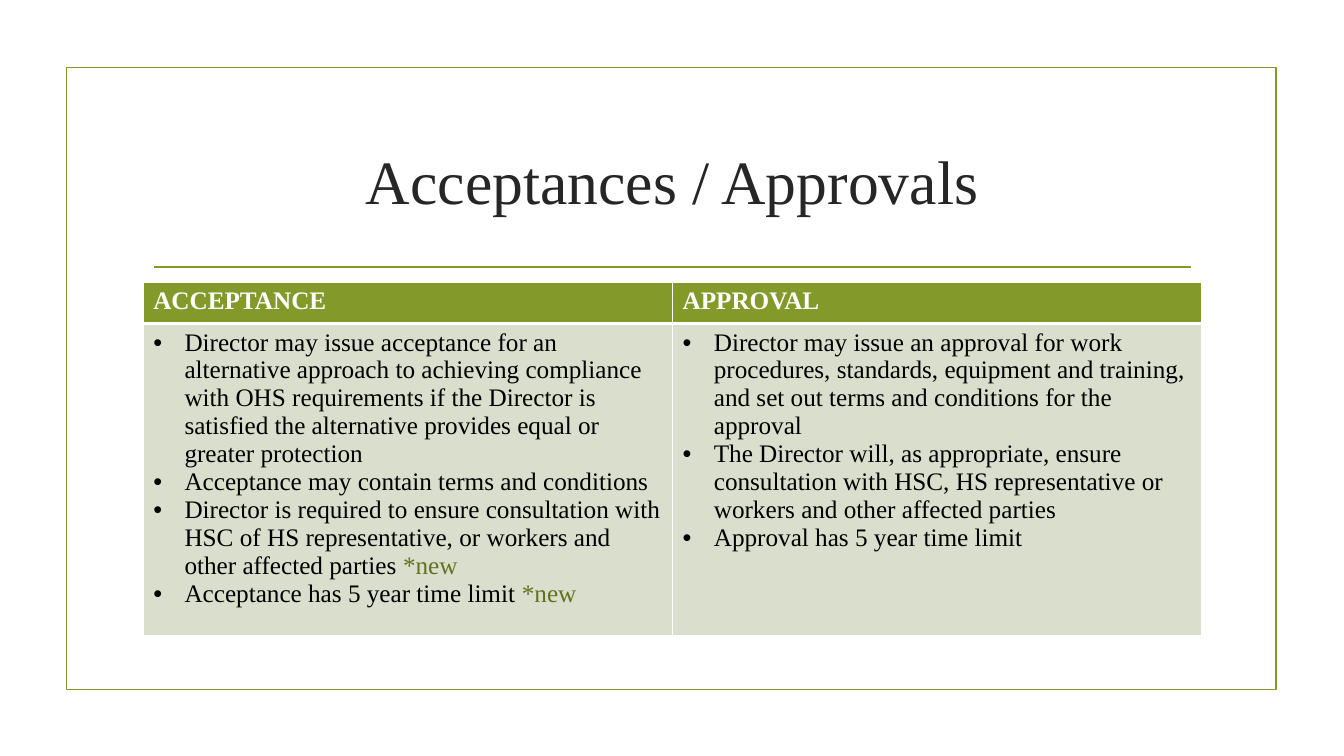
from pptx import Presentation, util as u
from pptx.dml.color import RGBColor
from pptx.enum import shapes, text
from pptx.oxml import parse_xml
from pptx.oxml.ns import nsdecls
from lxml import etree

WIDE, HIGH = u.Inches(13.33), u.Inches(7.5)
FONT = "Times New Roman"
GREEN, PALE, WHITE = "83992A", "D9DECD", "FFFFFF"
MARK = "*new"

HEADS = ["ACCEPTANCE", "APPROVAL"]
POINTS = [
    [
        "Director may issue acceptance for an alternative approach to achieving compliance "
        "with OHS requirements if the Director is satisfied the alternative provides equal "
        "or greater protection",
        "Acceptance may contain terms and conditions",
        "Director is required to ensure consultation with HSC of HS representative, or "
        "workers and other affected parties *new",
        "Acceptance has 5 year time limit *new",
    ],
    [
        "Director may issue an approval for work procedures, standards, equipment and "
        "training, and set out terms and conditions for the approval",
        "The Director will, as appropriate, ensure consultation with HSC, HS representative "
        "or workers and other affected parties",
        "Approval has 5 year time limit",
    ],
]


def color(code):
    return RGBColor.from_string(code)


def style(run, size, code, bold=False):
    font = run.font
    font.name, font.size, font.bold = FONT, u.Pt(size), bold
    font.color.rgb = color(code)


def stroke(item):
    item.line.color.rgb = color(GREEN)
    item.line.width = u.Pt(1.25)


def draw_frame(slide, left, top, width, height):
    frame = slide.shapes.add_shape(shapes.MSO_SHAPE.RECTANGLE, left, top, width, height)
    frame.shadow.inherit = False
    frame.fill.background()
    stroke(frame)


def draw_title(slide, left, top, width, height):
    box = slide.shapes.add_textbox(left, top, width, height)
    body = box.text_frame
    body.word_wrap = True
    body.vertical_anchor = text.MSO_ANCHOR.MIDDLE
    body.text = "Acceptances / Approvals"
    line = body.paragraphs[0]
    line.alignment = text.PP_ALIGN.CENTER
    style(line.runs[0], 44, "262626")
    # Rule below the title
    inset, drop = u.Inches(0.11), top + height + u.Inches(0.15)
    rule = slide.shapes.add_connector(
        shapes.MSO_CONNECTOR.STRAIGHT, left + inset, drop, left + width - inset, drop)
    stroke(rule)
    etree.SubElement(rule._element.spPr, "{http://schemas.openxmlformats.org/drawingml/2006/main}effectLst")


def paint(cell, fill, over, under):
    """Fill a cell and draw its borders, with top and bottom widths in points."""
    cell.fill.solid()
    cell.fill.fore_color.rgb = color(fill)
    sides = {"lnL": 1, "lnR": 1, "lnT": over, "lnB": under}
    for spot, (side, width) in enumerate(sides.items()):
        edge = parse_xml(
            f'<a:{side} {nsdecls("a")} w="{u.Pt(width)}"><a:solidFill>'
            f'<a:srgbClr val="{WHITE}"/></a:solidFill></a:{side}>')
        cell._tc.get_or_add_tcPr().insert(spot, edge)


def bullet(line):
    props = line._p.get_or_add_pPr()
    indent = u.Inches(0.31)
    props.set("marL", str(indent))
    props.set("indent", str(-indent))
    props.append(parse_xml(f'<a:buFont {nsdecls("a")} typeface="Arial"/>'))
    props.append(parse_xml(f'<a:buChar {nsdecls("a")} char="•"/>'))


def write_points(cell, points):
    body = cell.text_frame
    body.text = "\n".join(point.removesuffix(MARK) for point in points)
    for line, point in zip(body.paragraphs, points):
        bullet(line)
        style(line.runs[0], 18, "000000")
        if point.endswith(MARK):
            note = line.add_run()
            note.text = MARK
            style(note, 18, "62731F")


def draw_table(slide, left, top, width, height):
    grid = slide.shapes.add_table(2, len(HEADS), left, top, width, height).table
    grid.rows[0].height = u.Inches(0.41)
    grid.rows[1].height = height - grid.rows[0].height
    for col, (head, points) in enumerate(zip(HEADS, POINTS)):
        grid.columns[col].width = width // len(HEADS)
        upper, lower = grid.cell(0, col), grid.cell(1, col)
        upper.text_frame.text = head
        style(upper.text_frame.paragraphs[0].runs[0], 18, WHITE, True)
        paint(upper, GREEN, 1, 3)
        write_points(lower, points)
        paint(lower, PALE, 3, 1)


def main():
    deck = Presentation()
    deck.slide_width, deck.slide_height = WIDE, HIGH
    slide = deck.slides.add_slide(deck.slide_layouts[6])
    left, width = u.Inches(1.42), u.Inches(10.5)
    draw_frame(slide, u.Inches(0.66), u.Inches(0.67), u.Inches(12), u.Inches(6.17))
    draw_title(slide, left, u.Inches(1.07), width, u.Inches(1.43))
    draw_table(slide, left, u.Inches(2.8), width, u.Inches(3.21))
    deck.save("out.pptx")


if __name__ == "__main__":
    main()
